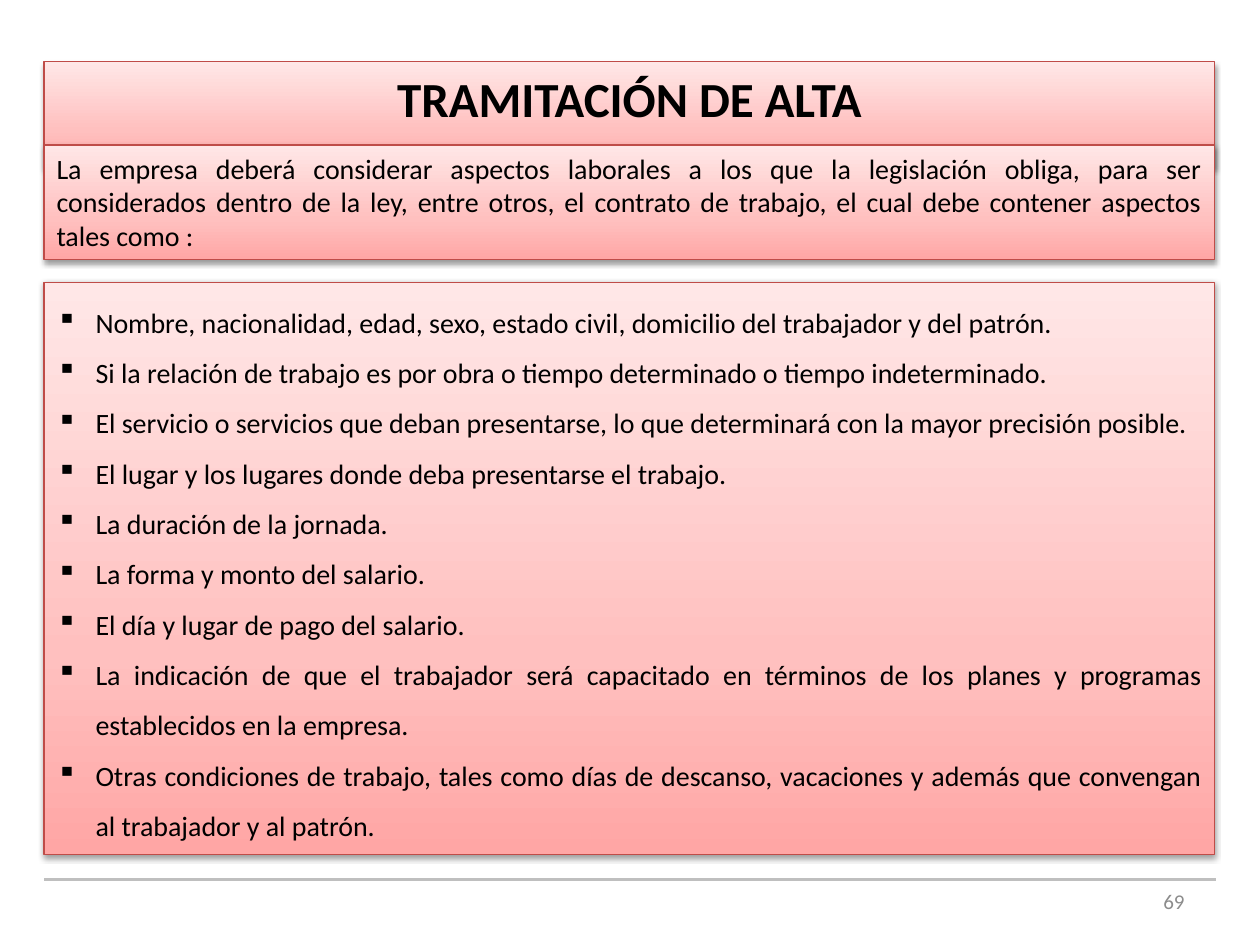
"""Build the slide on the contents of a work contract."""
from dataclasses import dataclass

from lxml.etree import SubElement as Sub
from pptx import Presentation
from pptx.dml.color import RGBColor as Rgb
from pptx.enum.shapes import MSO_CONNECTOR as Conn, MSO_SHAPE as Form
from pptx.enum.text import MSO_ANCHOR as Anchor, MSO_AUTO_SIZE as Auto, PP_ALIGN as Align
from pptx.oxml.ns import qn
from pptx.util import Inches, Pt

FONT = "Calibri"
LEFT, WIDTH = 0.35, 9.29
HUES = {"ink": "000000", "edge": "BF4C48", "rule": "BFBFBF", "page": "8C8C8C"}
STOPS = {0: "FFA6A5", 35: "FFC0BF", 100: "FFE7E7"}

TITLE = "TRAMITACIÓN DE ALTA"
INTRO = (
    "La empresa deberá considerar aspectos laborales a los que la legislación obliga, "
    "para ser considerados dentro de la ley, entre otros, el contrato de trabajo, "
    "el cual debe contener aspectos tales como :"
)
ITEMS = [
    "Nombre, nacionalidad, edad, sexo, estado civil, domicilio del trabajador y del patrón.",
    "Si la relación de trabajo es por obra o tiempo determinado o tiempo indeterminado.",
    "El servicio o servicios que deban presentarse, lo que determinará con la mayor precisión posible.",
    "El lugar y los lugares donde deba presentarse el trabajo.",
    "La duración de la jornada.",
    "La forma y monto del salario.",
    "El día y lugar de pago del salario.",
    "La indicación de que el trabajador será capacitado en términos de los planes y programas "
    "establecidos en la empresa.",
    "Otras condiciones de trabajo, tales como días de descanso, vacaciones y además que convengan "
    "al trabajador y al patrón.",
]


@dataclass
class Panel:
    """A shaded box and its text."""
    top: float
    height: float
    lines: list[str]
    size: int = 16
    align: Align = Align.JUSTIFY
    bold: bool = False
    listed: bool = False


def add_run(para, text: str, size: int, hue: str, bold: bool = False) -> None:
    """Add one formatted run."""
    run = para.add_run()
    run.text = text
    font = run.font
    font.name, font.size, font.bold = FONT, Pt(size), bold
    font.color.rgb = Rgb.from_string(HUES[hue])


def add_mark(para) -> None:
    """Give a paragraph a hanging square bullet."""
    para.line_spacing = 1.5
    props = para._p.get_or_add_pPr()
    props.set("marL", str(Inches(0.31)))
    props.set("indent", str(-Inches(0.31)))
    Sub(props, qn("a:buChar"), char="▪")


def shade(shape) -> None:
    """Set the gradient, edge and shadow of a panel."""
    shape.fill.gradient()
    shape.fill.gradient_angle = 90
    shape.line.color.rgb = Rgb.from_string(HUES["edge"])
    shape.line.width = Pt(0.75)
    shape.shadow.inherit = False
    props = shape.element.spPr
    stops = props.find(f".//{qn('a:gsLst')}")
    for stop in list(stops):
        stops.remove(stop)
    for pos, hue in STOPS.items():
        stop = Sub(stops, qn("a:gs"), pos=str(pos * 1000))
        Sub(stop, qn("a:srgbClr"), val=hue)
    cast = Sub(props.find(qn("a:effectLst")), qn("a:outerShdw"), blurRad=str(Pt(3.1)),
               dist=str(Pt(1.6)), dir="5400000", rotWithShape="0")
    tint = Sub(cast, qn("a:srgbClr"), val="000000")
    Sub(tint, qn("a:alpha"), val="38000")


def draw_panel(shape, panel: Panel) -> None:
    """Place a shape and fill it as a panel."""
    shape.left, shape.top = Inches(LEFT), Inches(panel.top)
    shape.width, shape.height = Inches(WIDTH), Inches(panel.height)
    shade(shape)
    frame = shape.text_frame
    frame.word_wrap = True
    frame.auto_size = Auto.SHAPE_TO_FIT_TEXT
    frame.vertical_anchor = Anchor.TOP
    for num, line in enumerate(panel.lines):
        para = frame.add_paragraph() if num else frame.paragraphs[0]
        para.alignment = panel.align
        if panel.listed:
            add_mark(para)
        add_run(para, line, panel.size, "ink", panel.bold)


def draw_foot(slide) -> None:
    """Draw the rule and the page number."""
    rule = slide.shapes.add_connector(
        Conn.STRAIGHT, Inches(LEFT), Inches(6.98), Inches(9.65), Inches(6.98))
    rule.line.color.rgb = Rgb.from_string(HUES["rule"])
    rule.line.width = Pt(2)
    Sub(rule.element.spPr, qn("a:effectLst"))
    box = slide.shapes.add_textbox(Inches(7.17), Inches(6.95), Inches(2.33), Inches(0.4))
    frame = box.text_frame
    frame.word_wrap = True
    frame.vertical_anchor = Anchor.MIDDLE
    para = frame.paragraphs[0]
    para.alignment = Align.RIGHT
    add_run(para, "69", 12, "page")


def main() -> None:
    """Build and save the slide."""
    deck = Presentation()
    deck.slide_width, deck.slide_height = Inches(10), Inches(7.5)
    slide = deck.slides.add_slide(deck.slide_layouts[5])
    draw_panel(slide.shapes.title, Panel(0.49, 0.57, [TITLE], 28, Align.CENTER, True))
    for panel in (Panel(1.15, 0.91, [INTRO]), Panel(2.24, 4.54, ITEMS, listed=True)):
        shape = slide.shapes.add_shape(Form.RECTANGLE, 0, 0, 0, 0)
        draw_panel(shape, panel)
    draw_foot(slide)
    deck.save("out.pptx")


if __name__ == "__main__":
    main()
